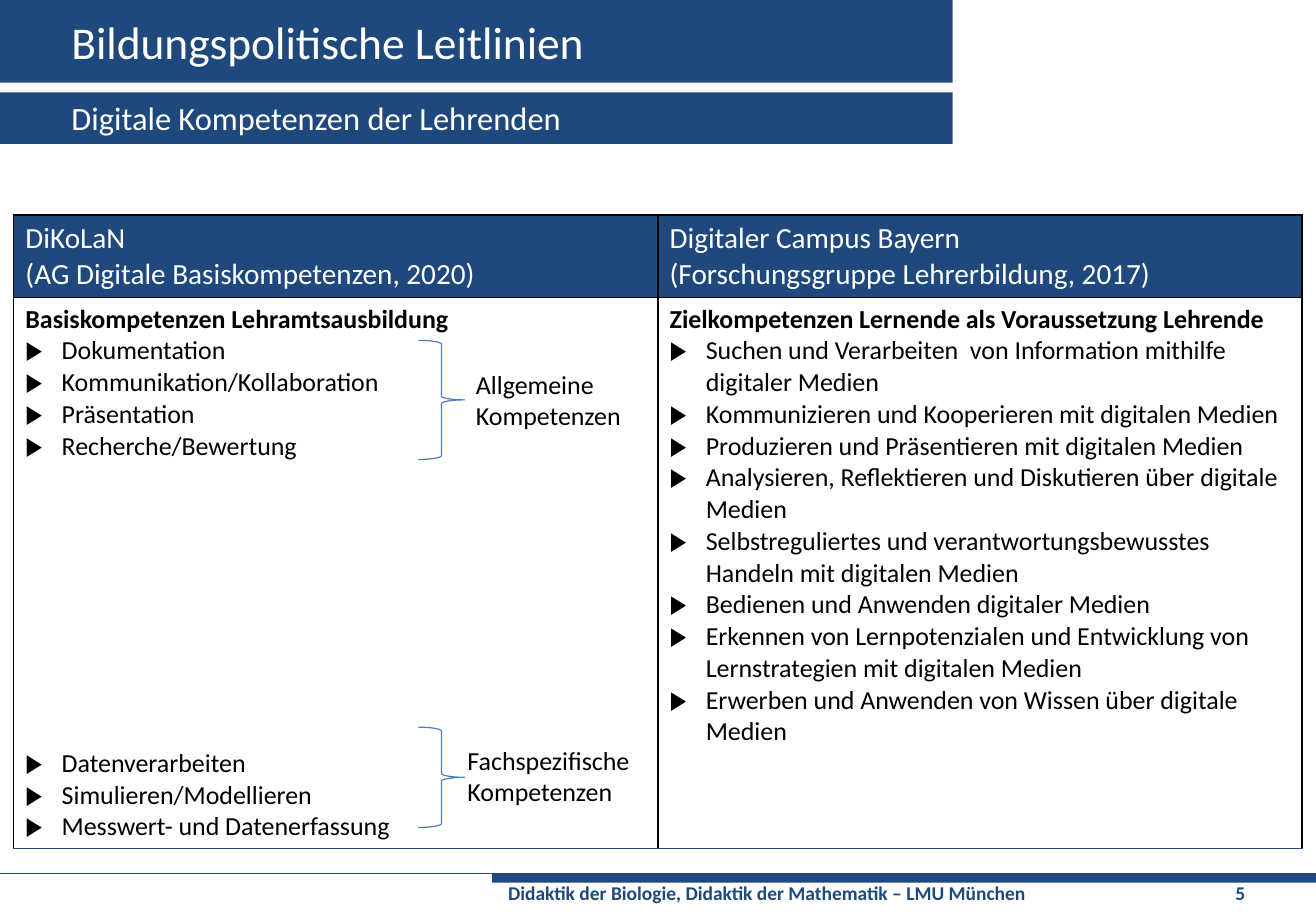
"""Build the slide on digital competences of teachers."""
from lxml.etree import SubElement
from pptx import Presentation
from pptx.dml.color import RGBColor
from pptx.enum.shapes import MSO_CONNECTOR, MSO_SHAPE
from pptx.enum.text import MSO_ANCHOR
from pptx.oxml import parse_xml
from pptx.oxml.ns import nsdecls, qn
from pptx.util import Inches, Pt

NAVY, BRACE_BLUE, WHITE, BLACK = "1F497D", "4B7EBC", "FFFFFF", "000000"
BULLET_INDENT = Inches(0.31)
TEXT_GAP = Pt(176)
FOOTER_TABS = (5.25, 6.26)

presentation = Presentation()
presentation.slide_width = Pt(810.75)
presentation.slide_height = Pt(567)
slide = presentation.slides.add_slide(presentation.slide_layouts[6])
shapes = slide.shapes


def place(left, top, width, height):
    """Turn percentages of the slide's size into lengths."""
    column, row = presentation.slide_width / 100, presentation.slide_height / 100
    return int(left * column), int(top * row), int(width * column), int(height * row)


def write(text_frame, lines, size, colour, bold=False):
    """Write one paragraph per line, breaking it at newlines, and return the paragraphs."""
    for number, line in enumerate(lines):
        paragraph = text_frame.add_paragraph() if number else text_frame.paragraphs[0]
        for part_number, part in enumerate(line.split("\n")):
            if part_number:
                paragraph.add_line_break()
            run = paragraph.add_run()
            run.text = part
            run.font.name = "Calibri"
            run.font.size = Pt(size)
            run.font.bold = bold
            run.font.color.rgb = RGBColor.from_string(colour)
    return text_frame.paragraphs


bars = [(0, 0, 72.4, 9), (0, 10.05, 72.4, 5.6), (37.4, 94.95, 62.6, 1)]
for bar in bars:
    shape = shapes.add_shape(MSO_SHAPE.RECTANGLE, *place(*bar))
    shape.shadow.inherit = False
    shape.fill.solid()
    shape.fill.fore_color.rgb = RGBColor.from_string(NAVY)
    shape.line.fill.background()

left, top, width, _ = place(0, 94.95, 100, 0)
footer_line = shapes.add_connector(MSO_CONNECTOR.STRAIGHT, left, top, width, top)
footer_line.line.color.rgb = RGBColor.from_string(NAVY)
footer_line.line.width = Pt(1)
SubElement(footer_line._element.spPr, qn("a:effectLst"))

labels = [
    ((4.55, 0, 67.1, 9), "Bildungspolitische Leitlinien", 28, WHITE, False),
    ((4.55, 10, 67.1, 5.6), "Digitale Kompetenzen der Lehrenden", 20, WHITE, False),
    ((37.4, 95.1, 62.6, 3.9),
     " Didaktik der Biologie, Didaktik der Mathematik – LMU München\t\t5", 12, NAVY, True),
]
for area, text, size, colour, bold in labels:
    text_frame = shapes.add_textbox(*place(*area)).text_frame
    text_frame.word_wrap = True
    text_frame.vertical_anchor = MSO_ANCHOR.MIDDLE if size > 12 else MSO_ANCHOR.TOP
    footer_paragraph = write(text_frame, [text], size, colour, bold)[0]
tab_list = SubElement(footer_paragraph._p.get_or_add_pPr(), qn("a:tabLst"))
for position in FOOTER_TABS:
    SubElement(tab_list, qn("a:tab"), pos=str(Inches(position)), algn="l")

frameworks = [
    ("DiKoLaN \n(AG Digitale Basiskompetenzen, 2020)",
     "Basiskompetenzen Lehramtsausbildung",
     ["Dokumentation", "Kommunikation/Kollaboration", "Präsentation",
      "Recherche/Bewertung", "Datenverarbeiten", "Simulieren/Modellieren",
      "Messwert- und Datenerfassung"]),
    ("Digitaler Campus Bayern \n(Forschungsgruppe Lehrerbildung, 2017)",
     "Zielkompetenzen Lernende als Voraussetzung Lehrende",
     ["Suchen und Verarbeiten  von Information mithilfe digitaler Medien",
      "Kommunizieren und Kooperieren mit digitalen Medien",
      "Produzieren und Präsentieren mit digitalen Medien",
      "Analysieren, Reflektieren und Diskutieren über digitale Medien",
      "Selbstreguliertes und verantwortungsbewusstes Handeln mit digitalen Medien",
      "Bedienen und Anwenden digitaler Medien",
      "Erkennen von Lernpotenzialen und Entwicklung von Lernstrategien mit digitalen Medien",
      "Erwerben und Anwenden von Wissen über digitale Medien"]),
]
table_area = place(1.05, 23.35, 97.9, 68.85)
table = shapes.add_table(2, len(frameworks), *table_area).table
table.rows[0].height = place(0, 0, 0, 9)[3]
table.rows[1].height = table_area[3] - table.rows[0].height

for index, (heading, subheading, competences) in enumerate(frameworks):
    header, body = table.cell(0, index), table.cell(1, index)
    write(header.text_frame, [heading], 18, WHITE)
    paragraphs = write(body.text_frame, [subheading, *competences], 16, BLACK)
    paragraphs[0].runs[0].font.bold = True
    for paragraph in paragraphs[1:]:
        properties = paragraph._p.get_or_add_pPr()
        properties.set("marL", str(BULLET_INDENT))
        properties.set("indent", str(-BULLET_INDENT))
        if paragraph.text == "Datenverarbeiten":
            paragraph.space_before = TEXT_GAP
        SubElement(properties, qn("a:buFont"), typeface="Calibri")
        SubElement(properties, qn("a:buChar"), char="▶")
    for cell, fill, bottom in ((header, NAVY, BLACK), (body, WHITE, NAVY)):
        cell.fill.solid()
        cell.fill.fore_color.rgb = RGBColor.from_string(fill)
        borders = {"lnL": BLACK, "lnR": BLACK, "lnT": BLACK, "lnB": bottom}
        for position, (side, colour) in enumerate(borders.items()):
            cell._tc.get_or_add_tcPr().insert(position, parse_xml(
                f'<a:{side} {nsdecls("a")} w="12700"><a:solidFill>'
                f'<a:srgbClr val="{colour}"/></a:solidFill></a:{side}>'))

groups = [
    ("Allgemeine", (31.8, 37, 3.5, 12.95), (35.3, 39.4, 13, 8.1)),
    ("Fachspezifische", (31.8, 79.05, 3.5, 10.9), (34.65, 80.35, 14.2, 8.1)),
]
for kind, brace_area, label_area in groups:
    brace = shapes.add_shape(MSO_SHAPE.RIGHT_BRACE, *place(*brace_area))
    brace.shadow.inherit = False
    brace.fill.background()
    brace.line.color.rgb = RGBColor.from_string(BRACE_BLUE)
    brace.line.width = Pt(0.75)
    text_frame = shapes.add_textbox(*place(*label_area)).text_frame
    text_frame.word_wrap = False
    write(text_frame, [kind, "Kompetenzen"], 16, BLACK)

presentation.save("out.pptx")
